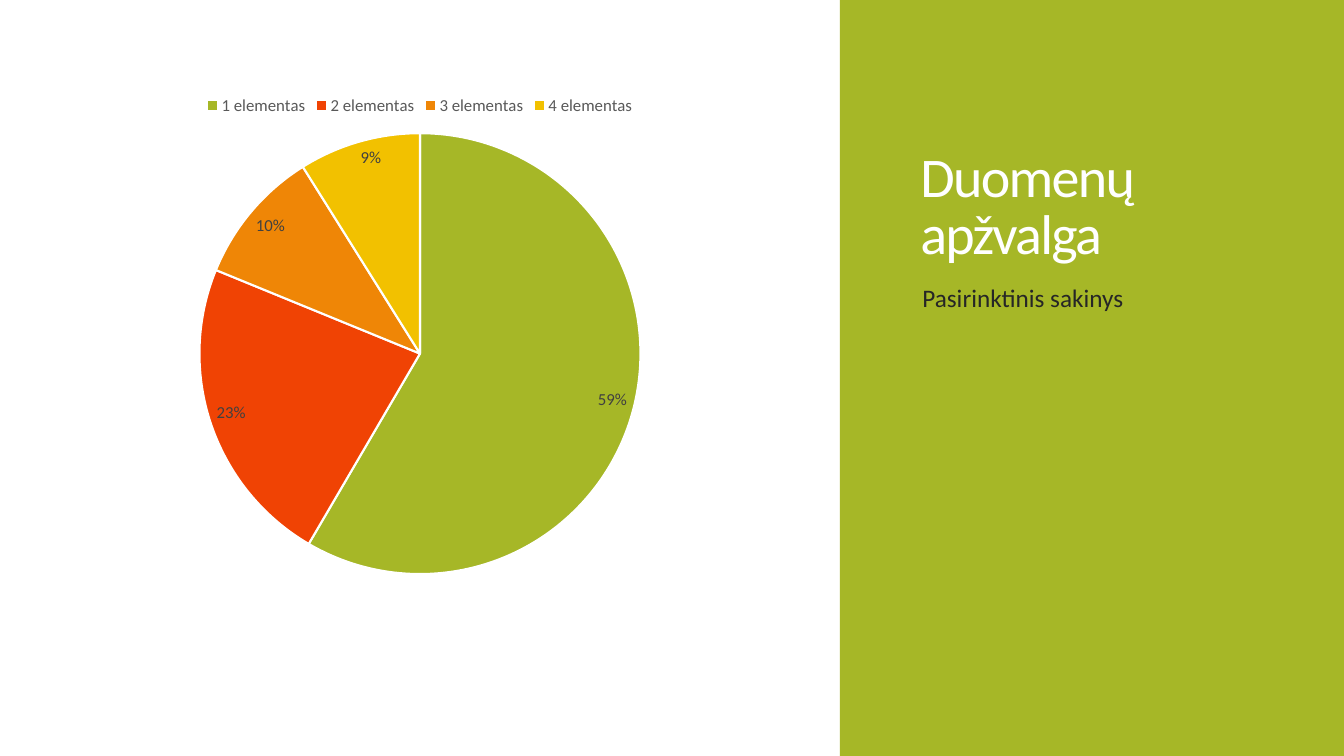
import pptx
import pptx.chart.data
import pptx.dml.color
import pptx.enum.chart
import pptx.enum.shapes
import pptx.enum.text
import pptx.util

W, H = 13.33, 7.5
FONT = "Calibri"
inch = pptx.util.Inches


def rgb(value):
    return pptx.dml.color.RGBColor.from_string(value)


def style(font, size, color):
    font.name = FONT
    font.size = pptx.util.Pt(size)
    font.color.rgb = rgb(color)


prs = pptx.Presentation()
prs.slide_width, prs.slide_height = inch(W), inch(H)
s = prs.slides.add_slide(prs.slide_layouts[6])

# Green panel over the right three eighths
panel = s.shapes.add_shape(
    pptx.enum.shapes.MSO_SHAPE.RECTANGLE,
    inch(W * 5 / 8), 0, inch(W * 3 / 8), inch(H))
panel.shadow.inherit = False
panel.fill.solid()
panel.fill.fore_color.rgb = rgb("A6B727")
panel.line.fill.background()

# Pie chart
slices = [("1 elementas", 59, "A6B727"), ("2 elementas", 23, "F04304"),
          ("3 elementas", 10, "EF8606"), ("4 elementas", 9, "F2C100")]
data = pptx.chart.data.CategoryChartData()
data.categories = [name for name, _, _ in slices]
data.add_series("Series 1", [value for _, value, _ in slices])
chart = s.shapes.add_chart(
    pptx.enum.chart.XL_CHART_TYPE.PIE,
    inch(W / 16), inch(H / 9), inch(W / 2), inch(H * 2 / 3), data).chart
style(chart.font, 10, "000000")
chart.has_title = False
chart.has_legend = True
chart.legend.position = pptx.enum.chart.XL_LEGEND_POSITION.TOP
chart.legend.include_in_layout = False
style(chart.legend.font, 12, "595959")

plot = chart.plots[0]
plot.vary_by_categories = True
for i, (_, _, color) in enumerate(slices):
    fmt = plot.series[0].points[i].format
    fmt.fill.solid()
    fmt.fill.fore_color.rgb = rgb(color)
    fmt.line.color.rgb = rgb("FFFFFF")
    fmt.line.width = pptx.util.Pt(1.5)

# The values are rounded shares, so they are shown with a percent sign
plot.has_data_labels = True
labels = plot.data_labels
labels.show_value = True
labels.number_format = '0"%"'
labels.number_format_is_linked = False
labels.position = pptx.enum.chart.XL_LABEL_POSITION.INSIDE_END
style(labels.font, 12, "404040")

# Title and sentence on the panel
ANCHOR = pptx.enum.text.MSO_ANCHOR
texts = [("Duomenų apžvalga", 9.03, 0.59, 2.1, ANCHOR.BOTTOM, 40, "FFFFFF"),
         ("Pasirinktinis sakinys", 9.05, 2.75, 3.42, ANCHOR.TOP, 18, "262626")]
paragraphs = []
for text, x, y, h, anchor, size, color in texts:
    tf = s.shapes.add_textbox(inch(x), inch(y), inch(3.7), inch(h)).text_frame
    tf.word_wrap = True
    tf.vertical_anchor = anchor
    p = tf.paragraphs[0]
    p.text = text
    style(p.font, size, color)
    paragraphs.append(p)

title, sentence = paragraphs
title.line_spacing = 0.85
title.runs[0].font._element.set("spc", "-120")  # tighter letters
sentence.space_before = pptx.util.Pt(12)

prs.save("out.pptx")
